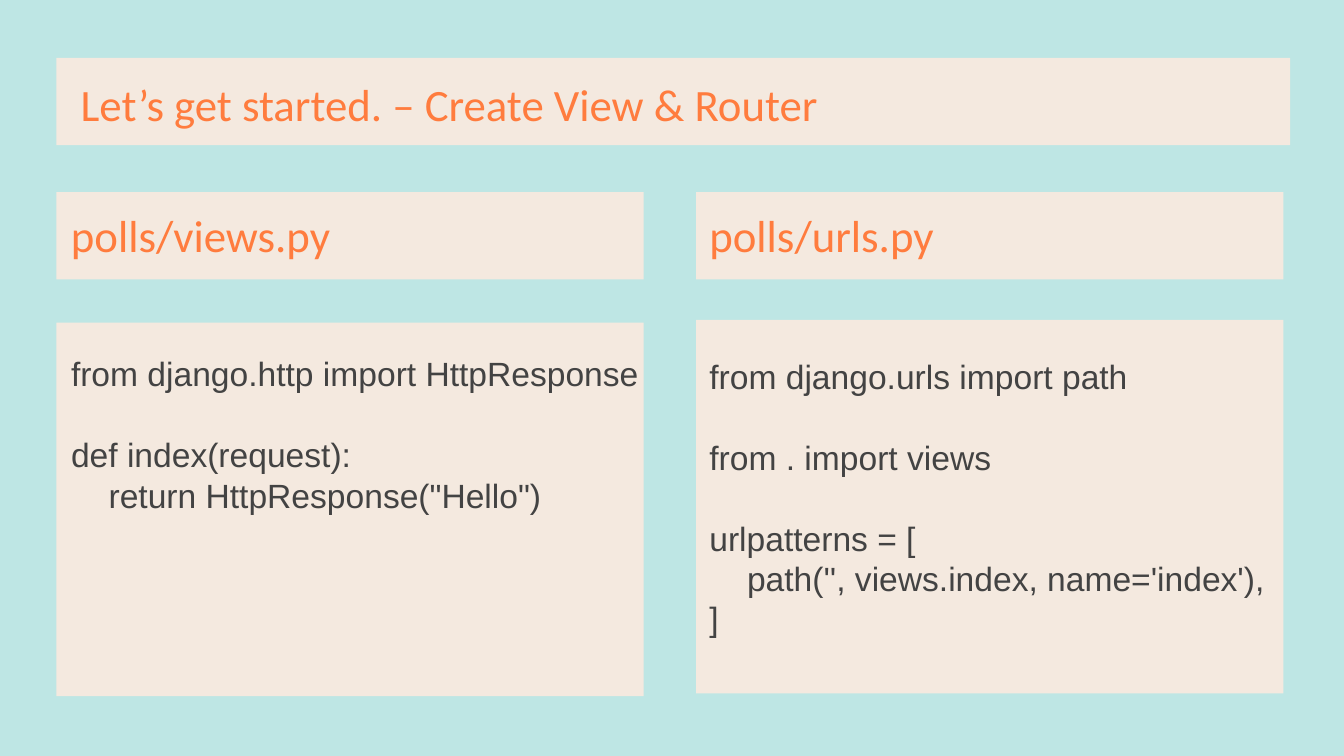
import pptx
import pptx.dml.color
import pptx.enum.shapes
import pptx.enum.text
import pptx.util

Inches, Pt = pptx.util.Inches, pptx.util.Pt
RGBColor = pptx.dml.color.RGBColor
AQUA = RGBColor(0xBE, 0xE6, 0xE4)
CREAM = RGBColor(0xF4, 0xE9, 0xDF)
ORANGE = RGBColor(0xFF, 0x7C, 0x3E)
GRAY = RGBColor(0x43, 0x43, 0x43)

HEADING = {"name": "Calibri", "size": Pt(24), "bold": False}
CODE = {"name": "Arial", "size": Pt(18), "bold": False}
CODE_GAP = Pt(21.7)
CODE_INDENT = Inches(0.28)

LEFT, COLUMN_STEP, COLUMN_WIDTH = 0.42, 4.76, 4.37
HEADER_TOP, HEADER_HEIGHT = 1.43, 0.65

deck = pptx.Presentation()
deck.slide_width = Inches(10)
deck.slide_height = deck.slide_width * 9 // 16
page = deck.slides.add_slide(deck.slide_layouts[5])
page.background.fill.solid()
page.background.fill.fore_color.rgb = AQUA


def add_panel(left, top, width, height):
    panel = page.shapes.add_shape(
        pptx.enum.shapes.MSO_SHAPE.RECTANGLE,
        *map(Inches, (left, top, width, height)))
    panel.shadow.inherit = False
    panel.fill.solid()
    panel.fill.fore_color.rgb = CREAM
    panel.line.fill.background()


def write(box, area, groups, style, color):
    for side, length in zip(("left", "top", "width", "height"), area):
        setattr(box, side, Inches(length))
    frame = box.text_frame
    layout = {"word_wrap": True,
              "auto_size": pptx.enum.text.MSO_AUTO_SIZE.NONE,
              "vertical_anchor": pptx.enum.text.MSO_ANCHOR.MIDDLE}
    layout.update({f"margin_{side}": Inches(0.1)
                   for side in ("left", "top", "right", "bottom")})
    for key, value in layout.items():
        setattr(frame, key, value)
    para = frame.paragraphs[0]
    for group_index, group in enumerate(groups):
        for line_index, line in enumerate(group):
            if group_index or line_index:
                para = frame.add_paragraph()
            para.alignment = pptx.enum.text.PP_ALIGN.LEFT
            para.space_before = CODE_GAP if group_index and not line_index else Pt(0)
            if line.startswith("\t"):
                para._p.get_or_add_pPr().set("marL", str(CODE_INDENT))
            span = para.add_run()
            span.text = line.strip()
            for key, value in style.items():
                setattr(span.font, key, value)
            span.font.color.rgb = color


add_panel(LEFT, 0.43, 9.18, HEADER_HEIGHT)
title = page.shapes.title
title.element.getparent().append(title.element)
write(title, (0.5, 0.49, 9.06, 0.56),
      [["Let’s get started. – Create View & Router"]], HEADING, ORANGE)

files = [
    ("polls/views.py", 2.4, 0.43, 2.07,
     [["from django.http import HttpResponse"],
      ["def index(request):", "\treturn HttpResponse(\"Hello\")"]]),
    ("polls/urls.py", 2.38, 5.18, 2.54,
     [["from django.urls import path"],
      ["from . import views"],
      ["urlpatterns = [", "\tpath('', views.index, name='index'),", "]"]]),
]
for column, (name, panel_top, text_left, code_top, code) in enumerate(files):
    left = LEFT + column * COLUMN_STEP
    add_panel(left, panel_top, COLUMN_WIDTH, 2.78)
    add_panel(left, HEADER_TOP, COLUMN_WIDTH, HEADER_HEIGHT)
    for area, groups, style, color in (
            ((text_left, code_top, 5.31, 2.32), code, CODE, GRAY),
            ((text_left, HEADER_TOP, 4.34, 0.63), [[name]], HEADING, ORANGE)):
        write(page.shapes.add_textbox(0, 0, 0, 0), area, groups, style, color)

deck.save("out.pptx")
